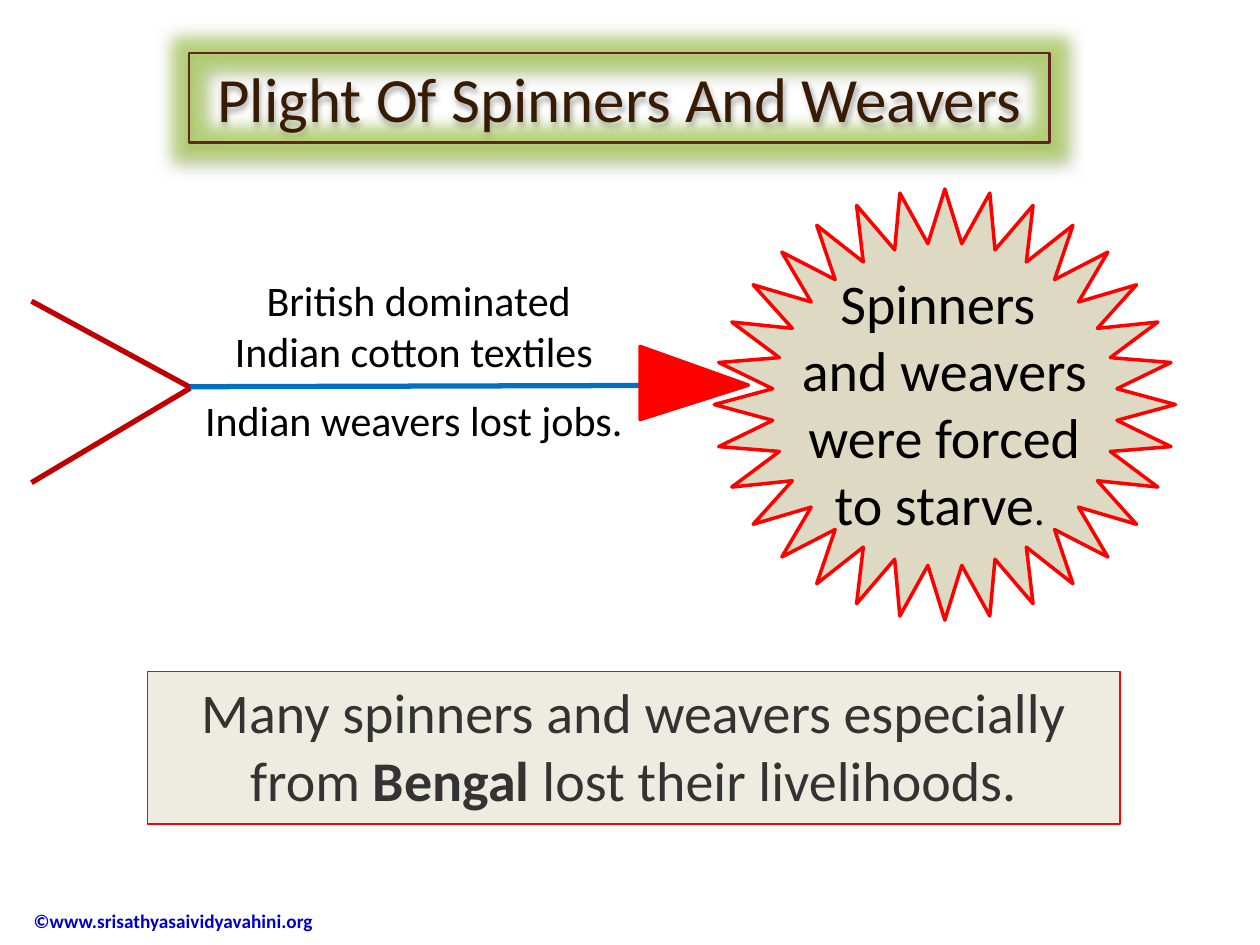
from dataclasses import dataclass

import pptx
import pptx.dml.color
import pptx.enum.shapes
import pptx.enum.text
import pptx.oxml
import pptx.oxml.ns
import pptx.util
from lxml import etree

Pt = pptx.util.Pt
SHAPES = pptx.enum.shapes.MSO_SHAPE
ANCHOR = pptx.enum.text.MSO_ANCHOR
ALIGN = pptx.enum.text.PP_ALIGN
FONT = "Calibri"
COLORS = {
    "black": "000000", "brown": "371B03", "maroon": "632523", "glow": "A5D040",
    "red": "FF0000", "dark red": "C00000", "blue": "0070C0", "link": "0000CC",
    "tan": "DDD9C3", "cream": "EEECE1", "gray": "333333",
}


@dataclass(frozen=True)
class Box:
    left: float
    top: float
    width: float
    height: float


@dataclass(frozen=True)
class Words:
    text: str
    size: float
    color: str = "black"
    bold: bool = False


@dataclass(frozen=True)
class Label:
    box: Box
    paragraphs: tuple[tuple[Words, ...], ...]


@dataclass(frozen=True)
class Stroke:
    start: tuple[float, float]
    end: tuple[float, float]
    color: str


@dataclass(frozen=True)
class Figure:
    kind: SHAPES
    box: Box
    fill: str
    rotation: float = 0


TITLE_BOX = Box(108, 30.2, 491.8, 51.1)
SUMMARY_BOX = Box(84.2, 383.8, 555.8, 87.1)
FOOTER_BOX = Box(12.2, 511.2, 205, 29.5)
STAR = Figure(SHAPES.STAR_32_POINT, Box(408.2, 108, 263.5, 263.5 * 0.935), "tan")
ARROWHEAD = Figure(SHAPES.ISOSCELES_TRIANGLE, Box(375.8, 187.9, 41.8, 61.9), "red", 90)

STROKES = [
    Stroke((108, 221), (365.8, 220.3), "blue"),
    Stroke((108, 221), (18, 172.1), "dark red"),
    Stroke((108.7, 221.8), (18, 275.8), "dark red"),
]
LABELS = [
    Label(Box(438.5, 149.8, 202.3, 162.7), (
        (Words("Spinners ", 32),),
        (Words("and weavers were forced to starve", 32), Words(". ", 24)),
    )),
    Label(Box(108.7, 153.4, 255.6, 65.5),
          ((Words(" British dominated Indian cotton textiles", 24),),)),
    Label(Box(108.7, 221.8, 255.6, 36), ((Words("Indian weavers lost jobs.", 24),),)),
]
SUMMARY = (
    Words("Many spinners and weavers especially from ", 32, "gray"),
    Words("Bengal ", 32, "gray", True),
    Words("lost their livelihoods.", 32, "gray"),
)


def color_of(name: str) -> pptx.dml.color.RGBColor:
    return pptx.dml.color.RGBColor.from_string(COLORS[name])


def in_points(box: Box) -> tuple:
    return Pt(box.left), Pt(box.top), Pt(box.width), Pt(box.height)


def move(shape, box: Box) -> None:
    shape.left, shape.top, shape.width, shape.height = in_points(box)


def outline(shape, color: str, width: float) -> None:
    shape.line.color.rgb = color_of(color)
    shape.line.width = Pt(width)


def paint(shape, color: str) -> None:
    shape.fill.solid()
    shape.fill.fore_color.rgb = color_of(color)


def write(shape, paragraphs: tuple[tuple[Words, ...], ...],
          anchor=ANCHOR.TOP, alignment=ALIGN.CENTER) -> None:
    frame = shape.text_frame
    frame.word_wrap = True
    frame.auto_size = pptx.enum.text.MSO_AUTO_SIZE.NONE
    frame.vertical_anchor = anchor
    for index, pieces in enumerate(paragraphs):
        paragraph = frame.add_paragraph() if index else frame.paragraphs[0]
        paragraph.alignment = alignment
        paragraph.space_before = Pt(0)
        for piece in pieces:
            run = paragraph.add_run()
            run.text = piece.text
            run.font.name = FONT
            run.font.size = Pt(piece.size)
            run.font.bold = piece.bold
            run.font.color.rgb = color_of(piece.color)


def draw_label(slide, label: Label) -> None:
    write(slide.shapes.add_textbox(*in_points(label.box)), label.paragraphs)


def draw_stroke(slide, stroke: Stroke) -> None:
    ends = [Pt(value) for value in stroke.start + stroke.end]
    connector = slide.shapes.add_connector(
        pptx.enum.shapes.MSO_CONNECTOR.STRAIGHT, *ends)
    outline(connector, stroke.color, 3)
    properties = connector._element.spPr
    etree.SubElement(properties, pptx.oxml.ns.qn("a:effectLst"))


def draw_figure(slide, figure: Figure):
    shape = slide.shapes.add_shape(figure.kind, *in_points(figure.box))
    shape.shadow.inherit = False
    shape.rotation = figure.rotation
    paint(shape, figure.fill)
    outline(shape, "red", 2)
    return shape


def add_glow_and_shadow(shape) -> None:
    effects = pptx.oxml.parse_xml(
        f'<a:effectLst {pptx.oxml.ns.nsdecls("a")}>'
        f'<a:glow rad="{Pt(18)}"><a:srgbClr val="{COLORS["glow"]}">'
        '<a:alpha val="60000"/></a:srgbClr></a:glow>'
        f'<a:outerShdw blurRad="{Pt(3.5)}" dist="{Pt(2.2)}" dir="5400000" rotWithShape="0">'
        f'<a:srgbClr val="{COLORS["black"]}"><a:alpha val="32000"/></a:srgbClr>'
        '</a:outerShdw></a:effectLst>')
    shape._element.spPr.append(effects)


def remove_bullet(paragraph) -> None:
    properties = paragraph._p.get_or_add_pPr()
    properties.set("marL", "0")
    properties.set("indent", "0")
    etree.SubElement(properties, pptx.oxml.ns.qn("a:buNone"))


def main() -> None:
    presentation = pptx.Presentation()
    presentation.slide_width, presentation.slide_height = Pt(720), Pt(540)
    slide = presentation.slides.add_slide(presentation.slide_layouts[1])

    title = slide.shapes.title
    move(title, TITLE_BOX)
    title.fill.background()
    outline(title, "maroon", 1.5)
    add_glow_and_shadow(title)
    write(title, ((Words("Plight Of Spinners And Weavers", 36, "brown"),),), ANCHOR.MIDDLE)

    summary = slide.placeholders[1]
    move(summary, SUMMARY_BOX)
    paint(summary, "cream")
    outline(summary, "red", 0.75)
    remove_bullet(summary.text_frame.paragraphs[0])
    write(summary, (SUMMARY,))

    draw_figure(slide, STAR)
    for stroke in STROKES:
        draw_stroke(slide, stroke)
    for label in LABELS:
        draw_label(slide, label)
    arrowhead = draw_figure(slide, ARROWHEAD)
    arrowhead.adjustments[0] = 0.53

    footer = slide.shapes.add_textbox(*in_points(FOOTER_BOX))
    credit = Words("©www.srisathyasaividyavahini.org", 11, "link", True)
    write(footer, ((credit,),), ANCHOR.MIDDLE, ALIGN.LEFT)

    presentation.save("out.pptx")


if __name__ == "__main__":
    main()
